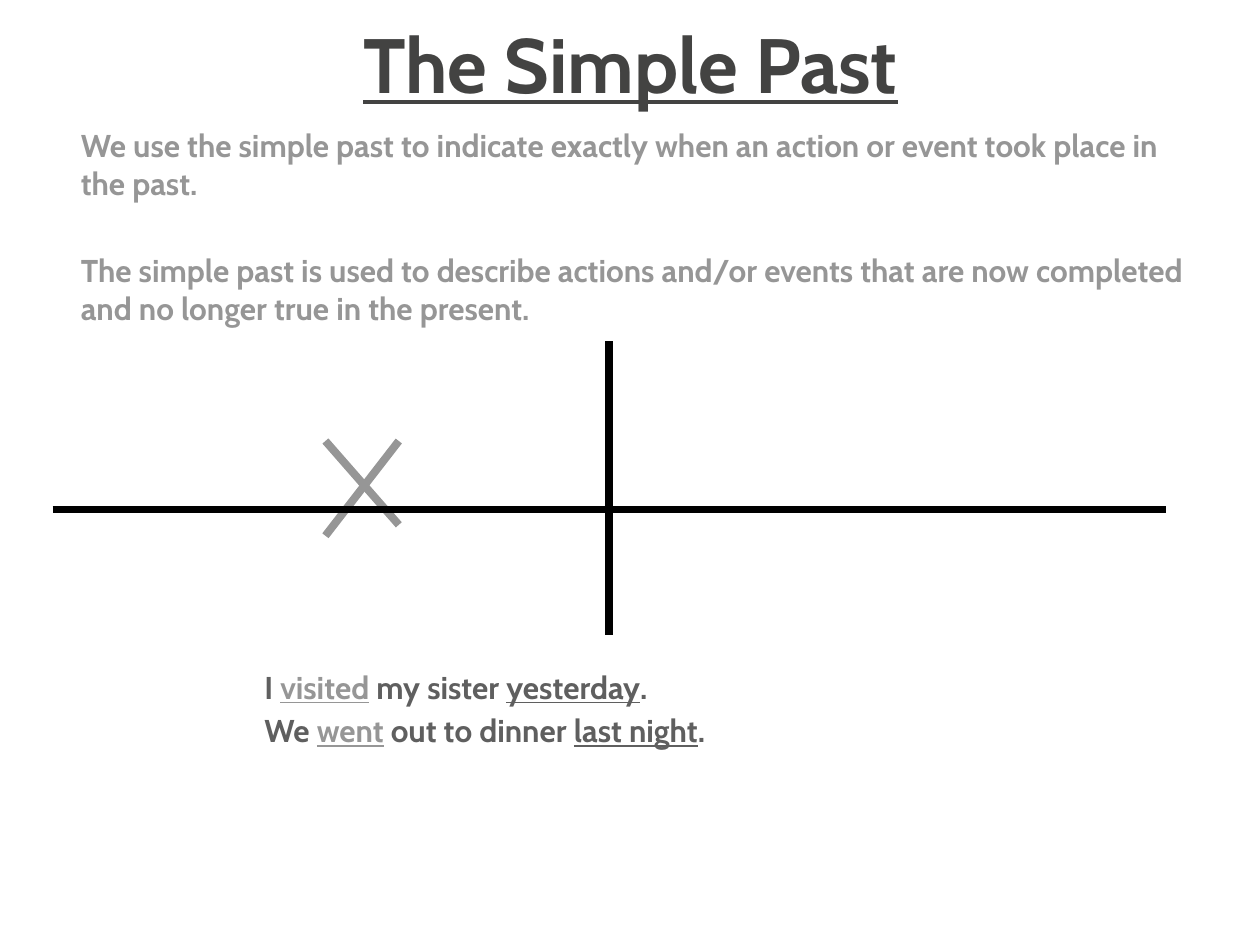
from dataclasses import dataclass
from typing import NamedTuple

from lxml import etree
from pptx import Presentation
from pptx.dml.color import RGBColor
from pptx.enum import shapes, text
from pptx.oxml.ns import qn
from pptx.util import Cm, Pt


@dataclass(frozen=True)
class Theme:
    font: str = "Cabin"
    heading: str = "434342"
    body: str = "5F5F5F"
    accent: str = "969696"
    axis: str = "000000"
    title_size: float = 44
    text_size: float = 18
    line_width: float = 4.5


THEME = Theme()


class Run(NamedTuple):
    text: str
    color: str = THEME.body
    underline: bool = False


class TextBlock(NamedTuple):
    left: float
    top: float
    width: float
    height: float
    paragraphs: list[list[Run]]
    size: float = THEME.text_size
    space_before: float = 0
    alignment: text.PP_ALIGN = text.PP_ALIGN.LEFT
    anchor: text.MSO_ANCHOR = text.MSO_ANCHOR.TOP
    auto_size: text.MSO_AUTO_SIZE = text.MSO_AUTO_SIZE.NONE


class Line(NamedTuple):
    x1: float
    y1: float
    x2: float
    y2: float
    color: str


TITLE = TextBlock(
    0.43, 0.22, 24.56, 2.11,
    [[Run("The Simple Past", THEME.heading, True)]],
    size=THEME.title_size,
    alignment=text.PP_ALIGN.CENTER,
    anchor=text.MSO_ANCHOR.BOTTOM,
    auto_size=text.MSO_AUTO_SIZE.SHAPE_TO_FIT_TEXT,
)
RULES = TextBlock(
    1.38, 2.42, 23.17, 4.35,
    [
        [Run("We use the simple past to indicate exactly when an action "
             "or event took place in the past.", THEME.accent)],
        [Run("The simple past is used to describe actions and/or events that "
             "are now completed and no longer true in the present.", THEME.accent)],
    ],
    space_before=28.3,
)
EXAMPLES = TextBlock(
    5.08, 13.34, 17.15, 2.54,
    [
        [Run("I "), Run("visited", THEME.accent, True), Run(" my sister "),
         Run("yesterday", underline=True), Run(".")],
        [Run("We "), Run("went", THEME.accent, True), Run(" out to dinner "),
         Run("last night", underline=True), Run(".")],
    ],
    space_before=3.2,
)
PAST_EVENT_CROSS = [
    Line(6.56, 8.89, 8.04, 10.58, THEME.accent),
    Line(8.04, 8.89, 6.56, 10.8, THEME.accent),
]
TIMELINE = [
    Line(1.06, 10.27, 23.5, 10.27, THEME.axis),
    Line(12.28, 6.88, 12.28, 12.8, THEME.axis),
]


def add_text(slide, block: TextBlock) -> None:
    box = slide.shapes.add_textbox(
        Cm(block.left), Cm(block.top), Cm(block.width), Cm(block.height))
    frame = box.text_frame
    frame.word_wrap = True
    frame.auto_size = block.auto_size
    frame.vertical_anchor = block.anchor
    for index, runs in enumerate(block.paragraphs):
        paragraph = frame.add_paragraph() if index else frame.paragraphs[0]
        paragraph.alignment = block.alignment
        if index:
            paragraph.space_before = Pt(block.space_before)
        for item in runs:
            run = paragraph.add_run()
            run.text = item.text
            run.font.name = THEME.font
            run.font.size = Pt(block.size)
            run.font.bold = True
            run.font.underline = item.underline
            run.font.color.rgb = RGBColor.from_string(item.color)


def add_line(slide, line: Line) -> None:
    connector = slide.shapes.add_connector(
        shapes.MSO_CONNECTOR.STRAIGHT,
        Cm(line.x1), Cm(line.y1), Cm(line.x2), Cm(line.y2))
    connector.line.color.rgb = RGBColor.from_string(line.color)
    connector.line.width = Pt(THEME.line_width)
    etree.SubElement(connector._element.spPr, qn("a:effectLst"))


def main() -> None:
    presentation = Presentation()
    presentation.slide_width = Cm(25.4)
    presentation.slide_height = Cm(19.05)
    slide = presentation.slides.add_slide(presentation.slide_layouts[6])
    for block in (TITLE, RULES, EXAMPLES):
        add_text(slide, block)
    for line in PAST_EVENT_CROSS + TIMELINE:
        add_line(slide, line)
    presentation.save("out.pptx")


if __name__ == "__main__":
    main()
